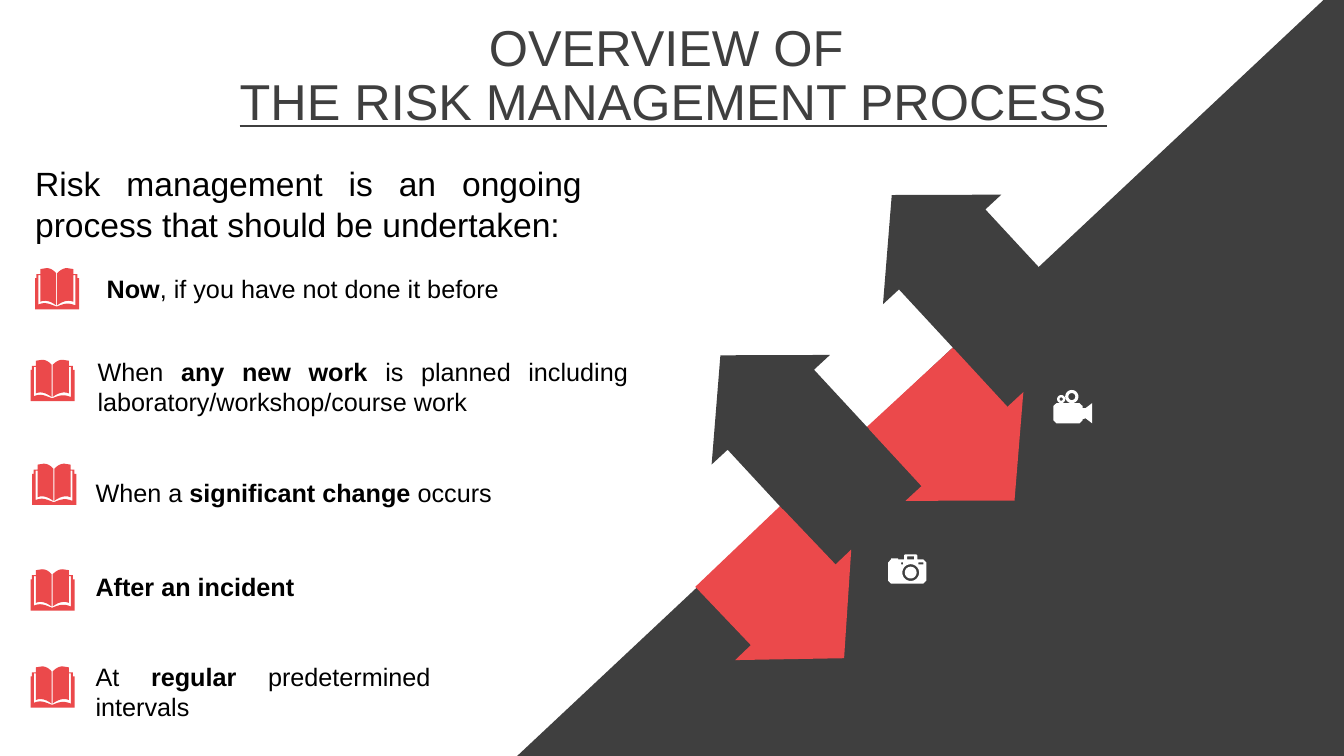
from math import cos, pi, sin

from pptx import Presentation
from pptx.dml.color import RGBColor
from pptx.enum.shapes import MSO_SHAPE
from pptx.enum.text import MSO_ANCHOR, PP_ALIGN
from pptx.util import Pt

CHARCOAL = RGBColor(0x3F, 0x3F, 0x3F)
RED = RGBColor(0xEB, 0x49, 0x4B)
WHITE = RGBColor(0xFF, 0xFF, 0xFF)
BLACK = RGBColor(0, 0, 0)

LEFT, CENTER, JUSTIFY = PP_ALIGN.LEFT, PP_ALIGN.CENTER, PP_ALIGN.JUSTIFY
TOP, MIDDLE = MSO_ANCHOR.TOP, MSO_ANCHOR.MIDDLE
LEFT_ARROW, RIGHT_ARROW = MSO_SHAPE.LEFT_ARROW, MSO_SHAPE.RIGHT_ARROW


def curve(start, handle_1, handle_2, end, steps=6):
    """Points along a Bezier curve."""
    points = []
    for step in range(steps + 1):
        t = step / steps
        u = 1 - t
        weights = (u ** 3, 3 * u * u * t, 3 * u * t * t, t ** 3)
        corners = (start, handle_1, handle_2, end)
        points.append(tuple(sum(w * c[axis] for w, c in zip(weights, corners))
                            for axis in (0, 1)))
    return points


def circle(x, y, radius, steps=32):
    angles = [2 * pi * step / steps for step in range(steps)]
    return [(x + radius * cos(a), y + radius * sin(a)) for a in angles]


def box(left, top, right, bottom):
    return [(left, top), (right, top), (right, bottom), (left, bottom)]


class SlideBuilder:
    font = "Arial"

    def __init__(self, slide):
        self.shapes = slide.shapes

    def paint(self, shape, color):
        shape.shadow.inherit = False
        shape.fill.solid()
        shape.fill.fore_color.rgb = color
        shape.line.fill.background()

    def outline(self, contours, color, left=0, top=0):
        """Filled outline; inner contours become holes."""
        placed = [[(100 * (left + x), 100 * (top + y)) for x, y in contour]
                  for contour in contours]
        builder = self.shapes.build_freeform(*placed[0][0], scale=Pt(1) / 100)
        for index, contour in enumerate(placed):
            if index:
                builder.move_to(*contour[0])
            builder.add_line_segments(contour[1:], close=True)
        self.paint(builder.convert_to_shape(), color)

    def arrow(self, kind, left, top, width, height, rotation, color):
        arrow = self.shapes.add_shape(kind, Pt(left), Pt(top), Pt(width), Pt(height))
        arrow.rotation = rotation
        arrow.adjustments[0] = 0.73
        arrow.adjustments[1] = 0.478
        self.paint(arrow, color)

    def text(self, left, top, width, height, runs, size, color=BLACK,
             align=JUSTIFY, anchor=TOP):
        """Runs are (text, style) pairs; style is bold, underline or None."""
        frame = self.shapes.add_textbox(
            Pt(left), Pt(top), Pt(width), Pt(height)).text_frame
        frame.word_wrap = True
        frame.vertical_anchor = anchor
        paragraph = frame.paragraphs[0]
        paragraph.alignment = align
        paragraph.font.name = self.font
        paragraph.font.size = Pt(size)
        paragraph.font.color.rgb = color
        for content, style in runs:
            if content == "\v":
                paragraph.add_line_break()
                continue
            run = paragraph.add_run()
            run.text = content
            if style == "bold":
                run.font.bold = True
            elif style == "underline":
                run.font.underline = True
        return paragraph


# Icon contours, in points from the icon's top left corner
BOOK = [
    [(15.1, 27.4)]
    + curve((15.8, 27.4), (20.9, 25.2), (23.8, 24.5), (28.8, 26.6))
    + [(28.8, 5), (27.4, 5)]
    + curve((27.4, 24), (23.8, 22.3), (19.4, 23.8), (15.8, 26.6))
    + curve((15.8, 3.6), (18, 1.4), (20.2, 0), (23, 0))
    + [(27.4, 0.7), (27.4, 4.3), (30.2, 4.3), (30.2, 7.2), (31.5, 7.2),
       (31.5, 29.5), (0, 29.5), (0, 7.2), (1, 7.2), (1, 4.3), (3.8, 4.3), (3.8, 0.7)]
    + curve((8.2, 0), (11, 0), (13.2, 1.4), (15.1, 3.6))
    + curve((15.1, 26.6), (11.5, 23.8), (7.2, 22.3), (3.8, 24))
    + [(3.8, 5), (2.4, 5)]
    + curve((2.4, 26), (7.4, 23.8), (10.3, 25.6), (15.1, 27.4))
]
PHOTO_CAMERA = [
    [(12.2, 0), (20.2, 0), (20.9, 0.7), (20.9, 3.6), (25.2, 3.6), (27.4, 5.8),
     (27.4, 18.7), (25.2, 20.9), (2.2, 20.9), (0, 18.7), (0, 5.8), (2.2, 3.6),
     (2.2, 2.9), (7.2, 2.9), (7.2, 3.6), (11.5, 3.6), (11.5, 0.7)],
    box(9.4, 5.8, 10.8, 7.2),
    box(21.6, 5.8, 25.2, 7.2),
    box(13.7, 1.4, 18.7, 3.6),
    circle(16.2, 13, 6),
    circle(16.2, 13, 4.2),
]
VIDEO_CAMERA = [
    [(2.2, 9.4), (18.7, 9.4), (20.9, 11.5), (20.9, 13), (23, 13), (27.7, 9.4),
     (27.7, 23.8), (23, 20.2), (20.9, 20.9), (20.9, 21.6), (18.7, 23.8),
     (2.2, 23.8), (0, 21.6), (0, 11.5)],
    circle(13.2, 4.7, 4.7),
    circle(13.2, 4.7, 2.5),
    circle(5.6, 6.5, 2.9),
    circle(5.6, 6.5, 1.2),
]

# Book left, book top, text left, text top, width, height, alignment, runs
OCCASIONS = [
    (25, 191.5, 69.1, 191.5, 320, 29, LEFT,
     [("Now", "bold"), (", if you have not done it before", None)]),
    (21.8, 257, 62.6, 250.6, 393, 51, JUSTIFY,
     [("When ", None), ("any new work ", "bold"),
      ("is planned including laboratory/workshop/course work", None)]),
    (23, 331.2, 61.2, 337.7, 308, 29, JUSTIFY,
     [("When a ", None), ("significant change ", "bold"), ("occurs", None)]),
    (21.8, 406.6, 61.2, 404.6, 175, 29, JUSTIFY,
     [("After an incident", "bold")]),
    (21.8, 476, 61.2, 468.7, 253.4, 51, JUSTIFY,
     [("At ", None), ("regular ", "bold"), ("predetermined intervals", None)]),
]


def main():
    presentation = Presentation()
    presentation.slide_width, presentation.slide_height = Pt(960), Pt(540)
    page = SlideBuilder(presentation.slides.add_slide(presentation.slide_layouts[6]))

    # Title
    title = page.text(25.2, 26.6, 911.5, 56.9,
                      [("OVERVIEW OF ", None), ("\v", None),
                       ("THE RISK MANAGEMENT PROCESS", "underline")],
                      36, CHARCOAL, CENTER, MIDDLE)
    title.line_spacing = 0.9
    title.space_before = Pt(10)

    # Dark corner and arrows
    page.outline([[(945.4, 0), (960, 0), (960, 540), (369.4, 540)]], CHARCOAL)
    page.arrow(RIGHT_ARROW, 632.2, 259.9, 110.2, 114.5, 47.3, RED)
    page.arrow(RIGHT_ARROW, 509.8, 373, 110.2, 114.5, 46.4, RED)
    page.arrow(LEFT_ARROW, 496.8, 236.9, 110.9, 115.2, 47.2, CHARCOAL)
    page.arrow(LEFT_ARROW, 619.2, 122.4, 110.9, 115.2, 47.2, CHARCOAL)

    # Camera icons
    page.outline(PHOTO_CAMERA, WHITE, 634.3, 396)
    page.outline(VIDEO_CAMERA, WHITE, 752.4, 278.6)

    # Introduction and occasions
    page.text(18, 113, 404.6, 65.5,
              [("Risk management is an ongoing process that should be undertaken:", None)],
              24)
    for book_left, book_top, left, top, width, height, align, runs in OCCASIONS:
        page.outline(BOOK, RED, book_left, book_top)
        page.text(left, top, width, height, runs, 18, align=align)

    presentation.save("out.pptx")


if __name__ == "__main__":
    main()
